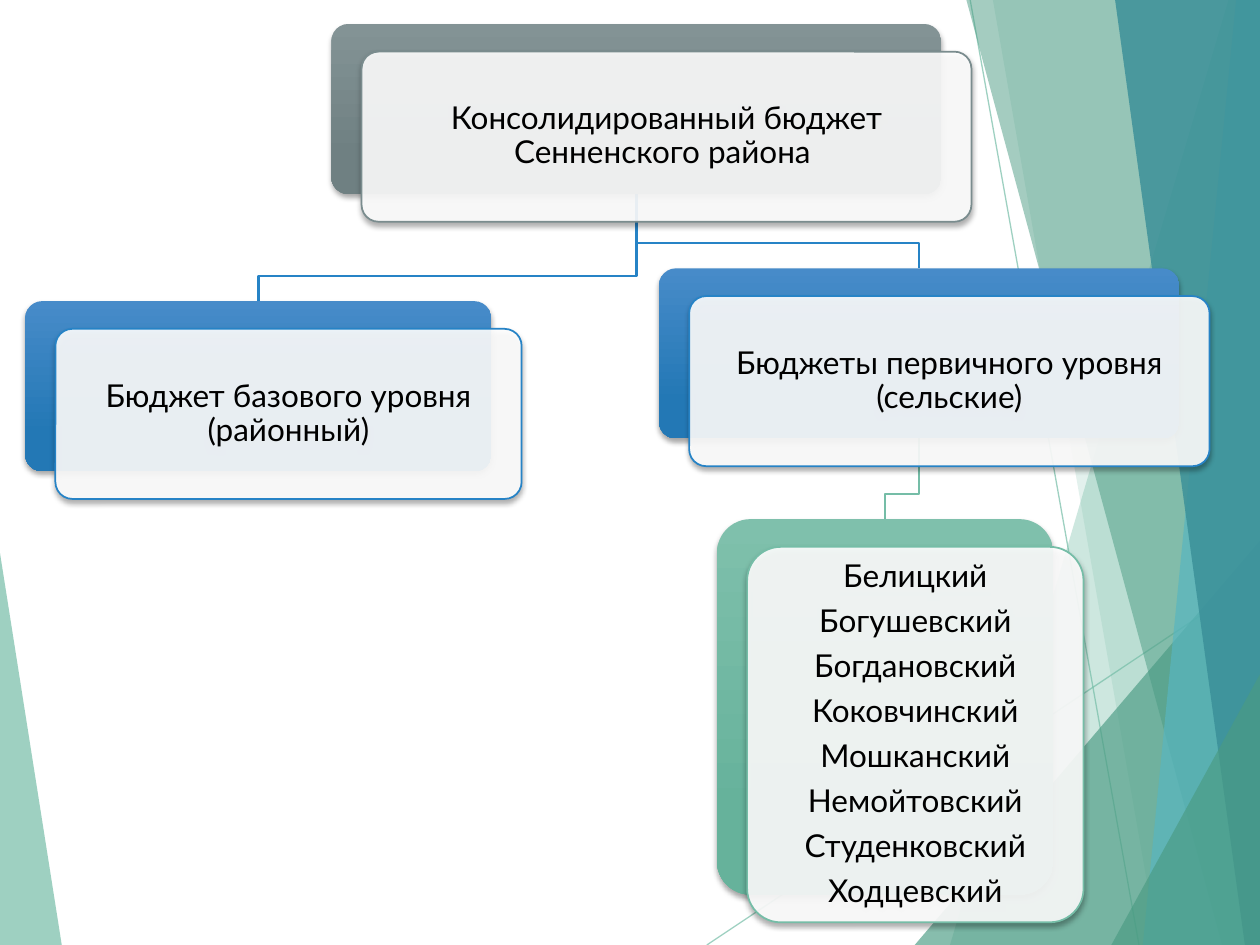
from lxml import etree
from pptx import Presentation
from pptx.dml.color import RGBColor
from pptx.enum.shapes import MSO_CONNECTOR, MSO_SHAPE
from pptx.enum.text import MSO_ANCHOR, PP_ALIGN
from pptx.oxml.ns import qn
from pptx.util import Inches, Pt

WIDTH, HEIGHT = 10, 7.5
FONT, TEXT_SIZE = "Lato", 18
CARD_SHIFT = (0.24, 0.22)
ELBOW_RISE = 0.2

LEFT_FACET = ([(0, 4.39), (0.49, HEIGHT), (0, HEIGHT)], "75BDA7", 70)
RAYS = [((5.61, HEIGHT), (WIDTH, 4.57)), ((7.7, 0), (9.04, HEIGHT))]
RAY_COLOR, RAY_OPACITY = "75BDA7", 70
BOTTOM_RIGHT, TOP_RIGHT = (WIDTH, HEIGHT), (WIDTH, 0)
RIGHT_FACETS = [
    ([(9.75, 0), (7.54, HEIGHT), BOTTOM_RIGHT, TOP_RIGHT], "75BDA7", 36),
    ([(7.88, 0), (9.19, HEIGHT), BOTTOM_RIGHT, TOP_RIGHT], "75BDA7", 20),
    ([(7.26, HEIGHT), (WIDTH, 4.29), BOTTOM_RIGHT], "4A9B83", 66),
    ([(7.67, 0), (9.7, HEIGHT), BOTTOM_RIGHT, TOP_RIGHT], "4A9B83", 50),
    ([(9.81, 0), (9.07, HEIGHT), BOTTOM_RIGHT, TOP_RIGHT], "58B6C0", 70),
    ([(8.85, 0), (9.88, HEIGHT), BOTTOM_RIGHT, TOP_RIGHT], "3A8F98", 82),
    ([(8.82, HEIGHT), (WIDTH, 5.35), BOTTOM_RIGHT], "4A9B83", 66),
]

GRAY = ("839395", "6F8082", "7A8C8E")
BLUE = ("478BC9", "2378B5", "2683C6")
GREEN = ("7FC0AC", "66B29B", "75BDA7")
BUDGETS = {
    "consolidated": dict(box=(2.63, 0.19, 4.84, 1.35), colors=GRAY, inset=0.11, parent=None,
                         lines=["Консолидированный бюджет Сенненского района "]),
    "district": dict(box=(0.2, 2.39, 3.7, 1.35), colors=BLUE, inset=0.11, parent="consolidated",
                     lines=["Бюджет базового уровня (районный)"]),
    "primary": dict(box=(5.23, 2.13, 4.13, 1.35), colors=BLUE, inset=0.11, parent="consolidated",
                    lines=["Бюджеты первичного уровня (сельские)"]),
    "villages": dict(box=(5.69, 4.12, 2.67, 2.98), colors=GREEN, inset=0.14, parent="primary",
                     lines=["Белицкий", "Богушевский", "Богдановский", "Коковчинский",
                            "Мошканский", "Немойтовский", "Студенковский", "Ходцевский"]),
}


def rgb(color):
    return RGBColor.from_string(color)


def set_opacity(shape, percent):
    color = next(shape.element.spPr.iter(qn("a:srgbClr")))
    etree.SubElement(color, qn("a:alpha"), val=str(percent * 1000))


def add_shadow(shape):
    effects = shape.element.spPr.find(qn("a:effectLst"))
    shadow = etree.SubElement(effects, qn("a:outerShdw"), blurRad=str(Pt(3)), dist=str(Pt(2)),
                              dir="5400000", algn="ctr", rotWithShape="0")
    color = etree.SubElement(shadow, qn("a:srgbClr"), val="000000")
    etree.SubElement(color, qn("a:alpha"), val="35000")


def add_outline(slide, points, close):
    start, *rest = [(Inches(x), Inches(y)) for x, y in points]
    builder = slide.shapes.build_freeform(*start)
    builder.add_line_segments(rest, close=close)
    outline = builder.convert_to_shape()
    outline.shadow.inherit = False
    return outline


def add_facet(slide, points, color, opacity):
    facet = add_outline(slide, points, close=True)
    facet.fill.solid()
    facet.fill.fore_color.rgb = rgb(color)
    facet.line.fill.background()
    set_opacity(facet, opacity)


def add_ray(slide, start, end):
    ray = slide.shapes.add_connector(MSO_CONNECTOR.STRAIGHT, *map(Inches, start + end))
    ray.line.color.rgb = rgb(RAY_COLOR)
    ray.line.width = Pt(0.75)
    set_opacity(ray, RAY_OPACITY)
    etree.SubElement(ray.element.spPr, qn("a:effectLst"))


def add_branch(slide, parent, child):
    left, top, width, height = parent["box"]
    start_x, start_y = left + width / 2, top + height
    left, end_y, width, _ = child["box"]
    end_x, bend_y = left + width / 2, end_y - ELBOW_RISE
    branch = add_outline(slide, [(start_x, start_y), (start_x, bend_y),
                                 (end_x, bend_y), (end_x, end_y)], close=False)
    branch.fill.background()
    branch.line.color.rgb = rgb(child["colors"][2])
    branch.line.width = Pt(1.5)


def add_panel(slide, box):
    panel = slide.shapes.add_shape(MSO_SHAPE.ROUNDED_RECTANGLE, *map(Inches, box))
    panel.adjustments[0] = 0.1
    panel.shadow.inherit = False
    add_shadow(panel)
    return panel


def add_card(slide, box, colors, inset, lines):
    light, dark, border = colors
    back = add_panel(slide, box)
    back.fill.gradient()
    back.fill.gradient_angle = 270
    for stop, color, position in zip(back.fill.gradient_stops, (light, dark), (0, 0.78)):
        stop.color.rgb = rgb(color)
        stop.position = position
    back.line.fill.background()

    left, top, width, height = box
    front = add_panel(slide, (left + CARD_SHIFT[0], top + CARD_SHIFT[1], width, height))
    front.fill.solid()
    front.fill.fore_color.rgb = rgb("FFFFFF")
    set_opacity(front, 90)
    front.line.color.rgb = rgb(border)
    front.line.width = Pt(1)

    frame = front.text_frame
    frame.word_wrap = True
    frame.vertical_anchor = MSO_ANCHOR.MIDDLE
    frame.margin_left = frame.margin_right = Inches(inset)
    frame.margin_top = frame.margin_bottom = Inches(inset)
    for index, line in enumerate(lines):
        paragraph = frame.add_paragraph() if index else frame.paragraphs[0]
        paragraph.alignment = PP_ALIGN.CENTER
        paragraph.line_spacing = 0.9
        paragraph.space_after = Pt(TEXT_SIZE * 0.35)
        run = paragraph.add_run()
        run.text = line
        run.font.name = FONT
        run.font.size = Pt(TEXT_SIZE)
        run.font.color.rgb = rgb("000000")


def main():
    deck = Presentation()
    deck.slide_width, deck.slide_height = Inches(WIDTH), Inches(HEIGHT)
    slide = deck.slides.add_slide(deck.slide_layouts[6])
    add_facet(slide, *LEFT_FACET)
    for start, end in RAYS:
        add_ray(slide, start, end)
    for facet in RIGHT_FACETS:
        add_facet(slide, *facet)
    for budget in BUDGETS.values():
        if budget["parent"]:
            add_branch(slide, BUDGETS[budget["parent"]], budget)
    for budget in BUDGETS.values():
        add_card(slide, budget["box"], budget["colors"], budget["inset"], budget["lines"])
    deck.save("out.pptx")


if __name__ == "__main__":
    main()
